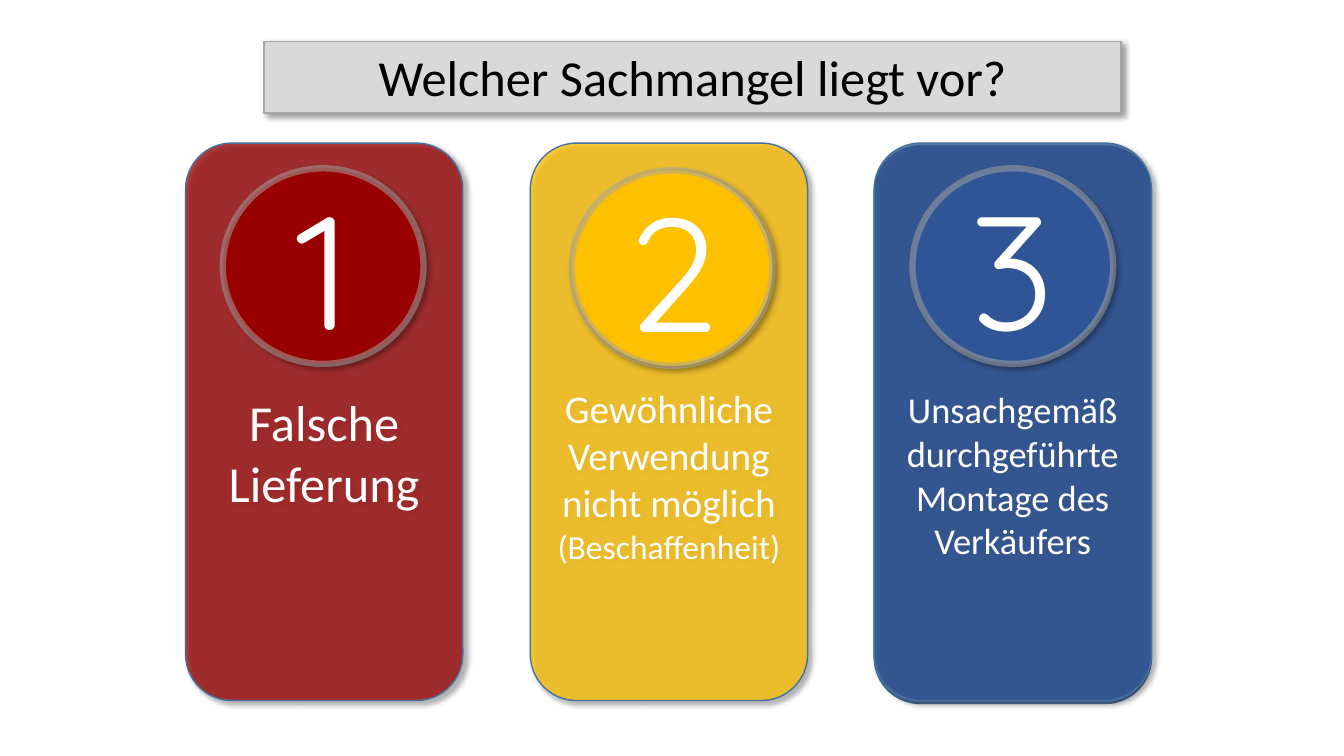
import pptx
import pptx.dml.color
import pptx.enum.shapes
import pptx.enum.text
import pptx.oxml
import pptx.oxml.ns
import pptx.util

Inches = pptx.util.Inches
Point = pptx.util.Pt
Shapes = pptx.enum.shapes.MSO_SHAPE
Anchor = pptx.enum.text.MSO_ANCHOR

COLORS = {
    "red": "990000",
    "yellow": "FFC000",
    "blue": "2F5597",
    "panel line": "43739E",
    "gray": "D9D9D9",
    "gray line": "A6A6A6",
    "white": "FFFFFF",
    "black": "000000",
}
PANEL_SIZE = (2.75, 5.53)
BADGE_SIZE = (1.99, 1.94)
REASONS = [
    dict(left=1.84, badge=(0.37, 0.25), color="red", number="1", text_top=2.33,
         lines=[("Falsche Lieferung", 36)]),
    dict(left=5.26, badge=(0.41, 0.27), color="yellow", number="2", text_top=2.26,
         lines=[("Gewöhnliche Verwendung nicht möglich", 28), ("(Beschaffenheit)", 24)]),
    dict(left=8.67, badge=(0.38, 0.25), color="blue", number="3", text_top=2.29,
         lines=[("Unsachgemäß durchgeführte Montage des Verkäufers", 26)]),
]


def rgb(name):
    """Return the named colour."""
    return pptx.dml.color.RGBColor.from_string(COLORS[name])


def set_opacity(color_format_parent, percent):
    """Make the solid colours below an element partly transparent."""
    for color in color_format_parent.findall("./{*}solidFill/{*}srgbClr"):
        alpha = pptx.oxml.parse_xml(
            f'<a:alpha {pptx.oxml.ns.nsdecls("a")} val="{percent * 1000}"/>')
        color.append(alpha)


def add_shadow(shape):
    """Give a shape a soft shadow to the lower right."""
    effects = shape._element.spPr.find(pptx.oxml.ns.qn("a:effectLst"))
    effects.append(pptx.oxml.parse_xml(
        f'<a:outerShdw {pptx.oxml.ns.nsdecls("a")} blurRad="{Point(4)}" dist="{Point(3)}" '
        'dir="2700000" algn="tl" rotWithShape="0">'
        f'<a:srgbClr val="{COLORS["black"]}"><a:alpha val="40000"/></a:srgbClr></a:outerShdw>'))


def add_figure(page, kind, box, fill, line, width=1, fill_opacity=100, line_opacity=100,
               shadow=True):
    """Draw a filled and outlined preset shape in a box."""
    shape = page.shapes.add_shape(kind, *map(Inches, box))
    shape.shadow.inherit = False
    shape.fill.solid()
    shape.fill.fore_color.rgb = rgb(fill)
    shape.line.color.rgb = rgb(line)
    shape.line.width = Point(width)
    if fill_opacity < 100:
        set_opacity(shape._element.spPr, fill_opacity)
    if line_opacity < 100:
        set_opacity(shape.line._ln, line_opacity)
    if shadow:
        add_shadow(shape)
    return shape


def write(shape, lines, font="Calibri", color="white", anchor=Anchor.MIDDLE, top=0.05):
    """Write centred lines, each a text and a size, into a shape."""
    frame = shape.text_frame
    frame.word_wrap = True
    frame.vertical_anchor = anchor
    frame.margin_top = Inches(top)
    for index, (text, size) in enumerate(lines):
        para = frame.add_paragraph() if index else frame.paragraphs[0]
        para.alignment = pptx.enum.text.PP_ALIGN.CENTER
        span = para.add_run()
        span.text = text
        span.font.name = font
        span.font.size = Point(size)
        span.font.color.rgb = rgb(color)


def add_title(page, box):
    """Draw the question bar above the panels."""
    bar = add_figure(page, Shapes.RECTANGLE, box, "gray", "gray line")
    write(bar, [("Welcher Sachmangel liegt vor?", 36)], color="black", anchor=Anchor.TOP)
    bar.text_frame.auto_size = pptx.enum.text.MSO_AUTO_SIZE.SHAPE_TO_FIT_TEXT


def add_panel(page, box, shadow=True):
    """Draw one translucent rounded panel and return it."""
    left, top, color = box
    return add_figure(page, Shapes.ROUNDED_RECTANGLE, (left, top, *PANEL_SIZE), color,
                      "panel line", fill_opacity=75, shadow=shadow)


def add_reason(page, top, left, badge, color, number, text_top, lines):
    """Draw a panel with its numbered badge and its reason."""
    panel = add_panel(page, (left, top, color))
    write(panel, lines, anchor=Anchor.TOP, top=text_top)
    badge_box = (left + badge[0], top + badge[1], *BADGE_SIZE)
    circle = add_figure(page, Shapes.OVAL, badge_box, color, "gray line", width=4.5,
                        line_opacity=53)
    write(circle, [(number, 115)], font="Quicksand")


def main():
    """Build and save the slide."""
    deck = pptx.Presentation()
    deck.slide_width = Inches(13.33)
    deck.slide_height = Inches(7.5)
    page = deck.slides.add_slide(deck.slide_layouts[6])
    add_panel(page, (8.67, 1.45, "blue"), shadow=False)
    for reason in REASONS:
        add_reason(page, 1.42, **reason)
    add_title(page, (2.62, 0.41, 8.5, 0.71))
    deck.save("out.pptx")


if __name__ == "__main__":
    main()
